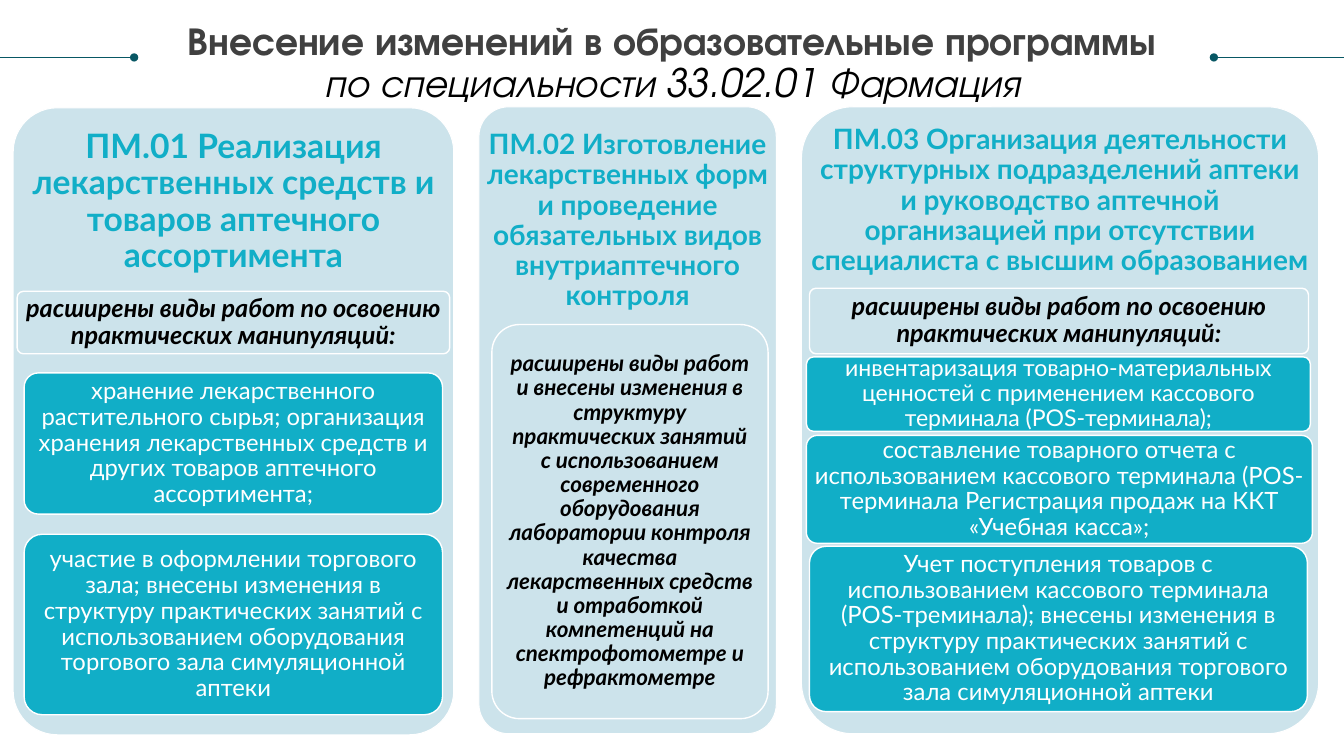
from lxml import etree
from pptx import Presentation
from pptx import util as u
from pptx.dml.color import RGBColor
from pptx.enum import shapes, text
from pptx.oxml import ns

COLORS = {"panel": "CCE3EB", "teal": "11AEC7", "rule": "085764",
          "white": "FFFFFF", "black": "000000", "title": "404040"}

# Text formats
HEADING = {"name": "Lato", "bold": True, "color": "teal"}
NOTE = {"name": "Lato", "bold": True, "italic": True, "color": "black"}
BODY = {"name": "Lato", "color": "white"}
TITLE = {"name": "TeX Gyre Adventor", "size": 28, "bold": True, "color": "title"}
SUBTITLE = {**TITLE, "bold": False, "italic": True, "color": "black"}

EXTENDED = "расширены виды работ по освоению практических манипуляций:"

# Each module: panel, (heading, size, height, inset), boxes as (place, text, size, format)
# Places are left, top, width, height in percent of the slide
MODULES = [
    ((0.98, 14.27, 32.78, 82.93),
     ("ПМ.01 Реализация лекарственных средств и товаров аптечного ассортимента",
      24, 24.93, 0.1),
     [((1.28, 38.53, 32.18, 8.27), EXTENDED, 18, NOTE),
      ((1.8, 49.33, 31.13, 18.67),
       "хранение лекарственного растительного сырья; организация хранения "
       "лекарственных средств и других товаров аптечного ассортимента;", 17, BODY),
      ((1.8, 70.67, 31.13, 23.87),
       "участие в оформлении торгового зала; внесены изменения в структуру "
       "практических занятий с использованием оборудования торгового зала "
       "симуляционной аптеки", 17, BODY)]),
    ((35.63, 14.13, 22.13, 82.93),
     ("ПМ.02 Изготовление лекарственных форм и проведение обязательных видов "
      "внутриаптечного контроля", 20, 30.27, 0.08),
     [((36.6, 42.93, 20.55, 52.13),
       "расширены виды работ и внесены изменения в структуру практических занятий "
       "с использованием современного оборудования лаборатории контроля качества "
       "лекарственных средств и отработкой компетенций на спектрофотометре и "
       "рефрактометре", 16, NOTE)]),
    ((59.63, 14.13, 38.48, 82.93),
     ("ПМ.03 Организация деятельности структурных подразделений аптеки и руководство "
      "аптечной организацией при отсутствии специалиста с высшим образованием",
      20, 24.93, 0.08),
     [((60.23, 38.13, 37.13, 8.67), EXTENDED, 18, NOTE),
      ((60, 47.2, 37.5, 9.87),
       "инвентаризация товарно-материальных ценностей с применением кассового "
       "терминала (POS-терминала);", 16.5, BODY),
      ((60, 57.6, 37.65, 14.27),
       "составление товарного отчета с использованием кассового терминала "
       "(POS-терминала Регистрация продаж на ККТ «Учебная касса»;", 17, BODY),
      ((60.23, 72.27, 37.05, 21.87),
       "Учет поступления товаров с использованием кассового терминала "
       "(POS-треминала); внесены изменения в структуру практических занятий с "
       "использованием оборудования торгового зала симуляционной аптеки", 17, BODY)]),
]

prs = Presentation()
prs.slide_width, prs.slide_height = u.Inches(13.33), u.Inches(7.5)


def rgb(key):
    return RGBColor.from_string(COLORS[key])


def place(left, top, width, height):
    w, h = prs.slide_width, prs.slide_height
    return [round(share * side / 100)
            for share, side in zip((left, top, width, height), (w, h, w, h))]


def add_run(p, words, fmt):
    r = p.add_run()
    r.text = words
    for key, value in fmt.items():
        if key == "color":
            r.font.color.rgb = rgb(value)
        else:
            setattr(r.font, key, u.Pt(value) if key == "size" else value)


def set_text(sp, runs, insets, anchor=text.MSO_ANCHOR.MIDDLE):
    tf = sp.text_frame
    frame = {"word_wrap": True, "vertical_anchor": anchor}
    for side, inset in zip(("left", "right", "top", "bottom"), insets):
        frame["margin_" + side] = u.Inches(inset)
    for key, value in frame.items():
        setattr(tf, key, value)
    p = tf.paragraphs[0]
    p.alignment, p.line_spacing = text.PP_ALIGN.CENTER, 0.9
    for i, (words, fmt) in enumerate(runs):
        if i:
            p.add_line_break()
        add_run(p, words, fmt)


def add_card(s, at, fill=None, line=1):
    sp = s.shapes.add_shape(shapes.MSO_SHAPE.ROUNDED_RECTANGLE, *place(*at))
    sp.shadow.inherit = False
    sp.adjustments[0] = 0.1
    if fill:
        sp.fill.solid()
        sp.fill.fore_color.rgb = rgb(fill)
    else:
        sp.fill.background()
    sp.line.color.rgb = rgb("white")
    sp.line.width = u.Pt(line)
    return sp


def add_module(s, panel, heading, boxes):
    words, size, height, inset = heading
    add_card(s, panel, "panel", 0.75)
    head = s.shapes.add_textbox(*place(*panel[:3], height))
    set_text(head, [(words, {**HEADING, "size": size})], [inset] * 4)
    for at, words, size, fmt in boxes:
        sp = add_card(s, at, "teal" if fmt is BODY else None)
        set_text(sp, [(words, {**fmt, "size": size})], (0.05, 0.05, 0.04, 0.04))


def add_rule(s, dot, edge):
    """Thin line from a round dot beside the title to the slide edge."""
    x1, y, x2, _ = place(dot, 7.6, edge, 0)
    line = s.shapes.add_connector(shapes.MSO_CONNECTOR.STRAIGHT, x1, y, x2, y)
    line.line.color.rgb = rgb("rule")
    line.line.width = u.Pt(0.5)
    etree.SubElement(line.line._get_or_add_ln(), ns.qn("a:headEnd"), type="oval")
    etree.SubElement(line._element.spPr, ns.qn("a:effectLst"))


def main():
    s = prs.slides.add_slide(prs.slide_layouts[6])

    # Rules on both sides of the title
    add_rule(s, 90.32, 100)
    add_rule(s, 9.98, 0)

    # Three module columns
    for module in MODULES:
        add_module(s, *module)

    # Title
    title = s.shapes.add_textbox(*place(1.88, 2.8, 96.25, 11.33))
    set_text(title, [("Внесение изменений в образовательные программы", TITLE),
                     ("по специальности 33.02.01 Фармация", SUBTITLE)],
             [0] * 4, text.MSO_ANCHOR.TOP)

    prs.save("out.pptx")


if __name__ == "__main__":
    main()
